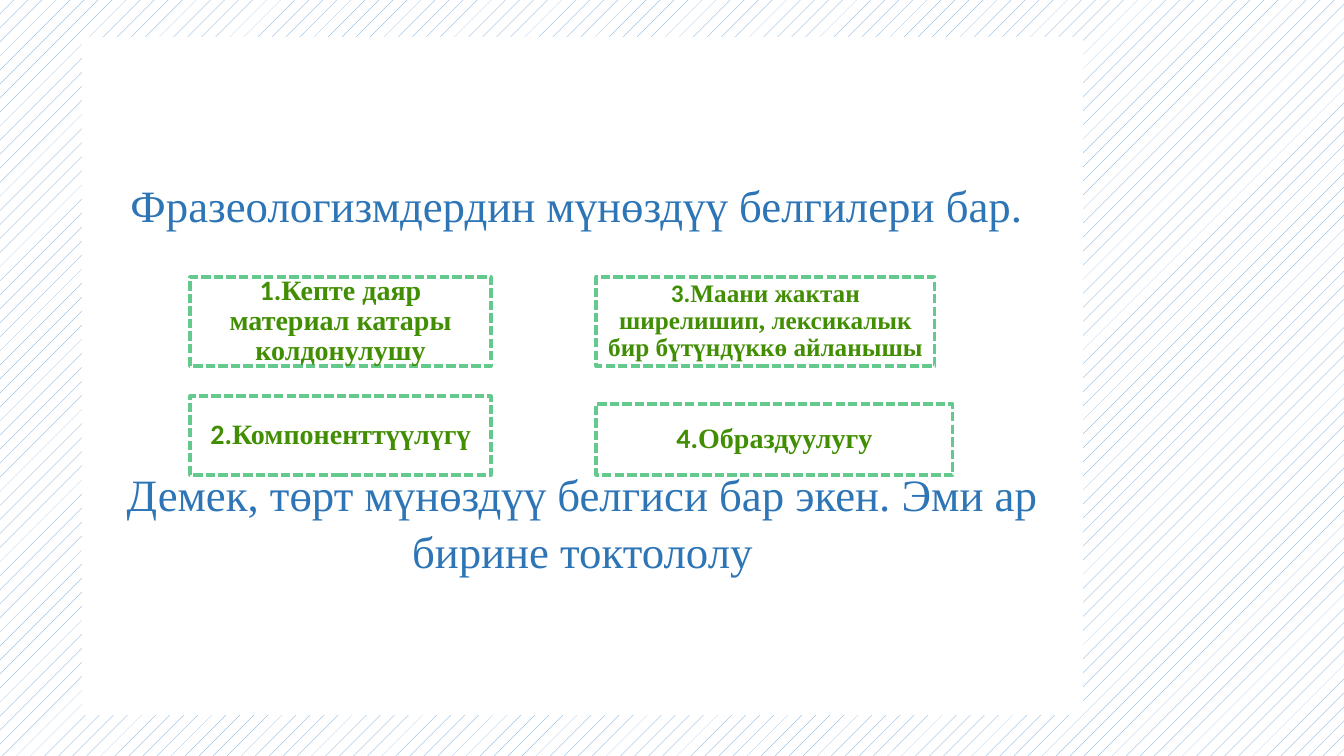
from dataclasses import dataclass

from pptx import Presentation
from pptx.dml.color import RGBColor as RGB
from pptx.enum.dml import MSO_LINE, MSO_PATTERN
from pptx.enum.shapes import MSO_SHAPE
from pptx.enum.text import MSO_ANCHOR, MSO_AUTO_SIZE, PP_ALIGN
from pptx.util import Pt


@dataclass(frozen=True)
class Theme:
    white: RGB = RGB.from_string("FFFFFF")
    pattern: RGB = RGB.from_string("5B9BD5")
    title: RGB = RGB.from_string("2E75B6")
    border: RGB = RGB.from_string("63C98C")
    feature: RGB = RGB.from_string("418E03")
    serif: str = "Times New Roman"
    sans: str = "Calibri"
    title_size: int = 32
    feature_size: int = 20
    small_size: int = 18


T = Theme()


def px(n):
    return round(n * 914400 / 100.8)


def add_run(p, text, font, size, color, bold=False):
    r = p.add_run()
    r.text = text
    r.font.name = font
    r.font.size = Pt(size)
    r.font.bold = bold
    r.font.color.rgb = color


prs = Presentation()
prs.slide_width, prs.slide_height = px(1344), px(756)
s = prs.slides.add_slide(prs.slide_layouts[5])

bg = s.background.fill
bg.patterned()
bg.pattern = MSO_PATTERN.PERCENT_5
bg.fore_color.rgb = T.pattern
bg.back_color.rgb = T.white

title = s.shapes.title
title.left, title.top, title.width, title.height = px(82), px(37), px(1001), px(678)
title.fill.solid()
title.fill.fore_color.rgb = T.white
tf = title.text_frame
tf.word_wrap = True
tf.auto_size = MSO_AUTO_SIZE.NONE
tf.vertical_anchor = MSO_ANCHOR.MIDDLE
sentences = [
    ("Фразеологизмдердин мүнөздүү белгилери бар. ", 0),
    ("Демек, төрт мүнөздүү белгиси бар экен. Эми ар бирине токтололу", 165),
]
for i, (text, gap) in enumerate(sentences):
    p = tf.add_paragraph() if i else tf.paragraphs[0]
    p.alignment = PP_ALIGN.CENTER
    p.line_spacing = 1.07
    p.space_before = Pt(gap)
    p.space_after = Pt(0)
    add_run(p, text, T.serif, T.title_size, T.title)

LEFT, RIGHT, TOP = 190, 596, 277
features = [
    (LEFT, TOP, 301, 89, T.feature_size, "Кепте даяр материал катары колдонулушу"),
    (LEFT, 396, 301, 79, T.feature_size, "Компоненттүүлүгү"),
    (RIGHT, TOP, 339, 89, T.small_size,
     "Маани жактан ширелишип, лексикалык бир бүтүндүккө айланышы"),
    (RIGHT, 404, 357, 71, T.feature_size, "Образдуулугу"),
]
for number, (x, y, w, h, size, text) in enumerate(features, 1):
    sp = s.shapes.add_shape(MSO_SHAPE.RECTANGLE, px(x), px(y), px(w), px(h))
    sp.shadow.inherit = False
    sp.fill.solid()
    sp.fill.fore_color.rgb = T.white
    sp.line.color.rgb = T.border
    sp.line.width = Pt(2.25)
    sp.line.dash_style = MSO_LINE.SQUARE_DOT
    tf = sp.text_frame
    tf.word_wrap = True
    tf.vertical_anchor = MSO_ANCHOR.MIDDLE
    p = tf.paragraphs[0]
    p.alignment = PP_ALIGN.CENTER
    p.line_spacing = 0.9
    p.space_before = Pt(10)
    add_run(p, f"{number}.", T.sans, size, T.feature, True)
    add_run(p, text, T.serif, size, T.feature, True)

prs.save("out.pptx")
